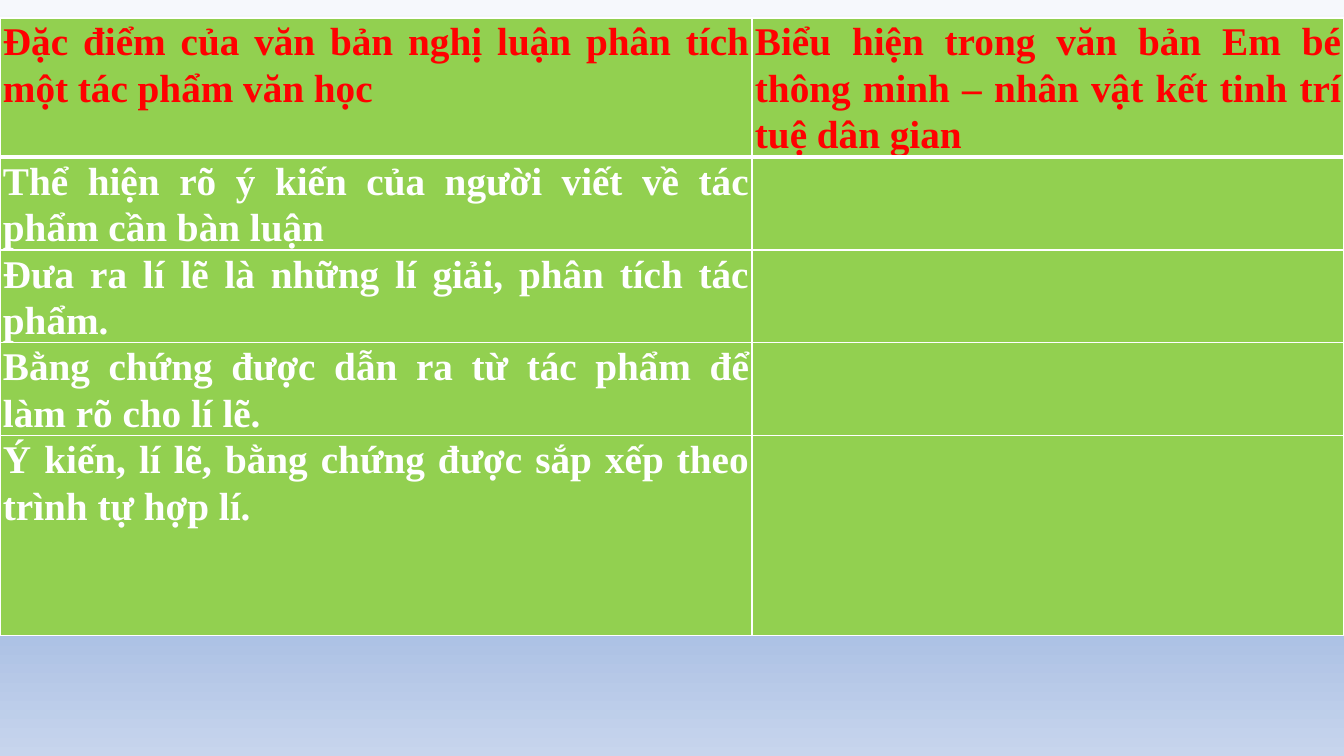
from lxml.etree import SubElement
from pptx import Presentation
from pptx.dml.color import RGBColor
from pptx.enum.text import PP_ALIGN as Align
from pptx.oxml.ns import qn
from pptx.util import Inches, Pt

SCALE = Inches(1) / 100.8
COLUMN_WIDTHS = [752, 592]
ROW_HEIGHTS = [126, 84, 84, 84, 200]
BACKGROUND_STOPS = [(0, "F6F8FC"), (74, "ABC0E4"), (83, "ABC0E4"), (100, "C7D5ED")]
GREEN, RED, WHITE = "92D050", "FF0000", "FFFFFF"
ROWS = [
    ("Đặc điểm của văn bản nghị luận phân tích một tác phẩm văn học",
     "Biểu hiện trong văn bản Em bé thông minh – nhân vật kết tinh trí tuệ dân gian"),
    ("Thể hiện rõ ý kiến của người viết về tác phẩm cần bàn luận", ""),
    ("Đưa ra lí lẽ là những lí giải, phân tích tác phẩm.", ""),
    ("Bằng chứng được dẫn ra từ tác phẩm để làm rõ cho lí lẽ.", ""),
    ("Ý kiến, lí lẽ, bằng chứng được sắp xếp theo trình tự hợp lí.", ""),
]


def px(length):
    return round(length * SCALE)


def color(value):
    return RGBColor.from_string(value)


def paint_background(page):
    fill = page.background.fill
    fill.gradient()
    fill.gradient_angle = 270
    stops = next(page.element.iter(qn("a:gsLst")))
    for stop in list(stops):
        stops.remove(stop)
    for position, value in BACKGROUND_STOPS:
        stop = SubElement(stops, qn("a:gs"), pos=str(position * 1000))
        SubElement(stop, qn("a:srgbClr"), val=value)


def add_borders(cell, top, bottom):
    properties = cell._tc.get_or_add_tcPr()
    for side, width in (("L", 1), ("R", 1), ("T", top), ("B", bottom)):
        line = SubElement(properties, qn(f"a:ln{side}"), w=str(Pt(width)))
        fill = SubElement(line, qn("a:solidFill"))
        SubElement(fill, qn("a:srgbClr"), val=WHITE)


def write_cell(cell, text, text_color):
    cell.margin_left = cell.margin_right = px(3)
    cell.margin_top = cell.margin_bottom = 0
    cell.text = text
    para = cell.text_frame.paragraphs[0]
    para.alignment = Align.JUSTIFY
    para.line_spacing = 1.07
    para.font.name = "Times New Roman"
    para.font.size = Pt(28)
    para.font.bold = True
    para.font.color.rgb = color(text_color)


def add_comparison_table(page):
    frame = page.shapes.add_table(
        len(ROWS), len(COLUMN_WIDTHS), 0, px(18),
        px(sum(COLUMN_WIDTHS)), px(sum(ROW_HEIGHTS)))
    table = frame.table
    for column, width in zip(table.columns, COLUMN_WIDTHS):
        column.width = px(width)
    for index, (row, height, texts) in enumerate(zip(table.rows, ROW_HEIGHTS, ROWS)):
        row.height = px(height)
        for cell, text in zip(row.cells, texts):
            add_borders(cell, 3 if index == 1 else 1, 3 if index == 0 else 1)
            cell.fill.solid()
            cell.fill.fore_color.rgb = color(GREEN)
            if text:
                write_cell(cell, text, RED if index == 0 else WHITE)


def main():
    deck = Presentation()
    deck.slide_width, deck.slide_height = px(1344), px(756)
    page = deck.slides.add_slide(deck.slide_layouts[6])
    paint_background(page)
    add_comparison_table(page)
    deck.save("out.pptx")


if __name__ == "__main__":
    main()
